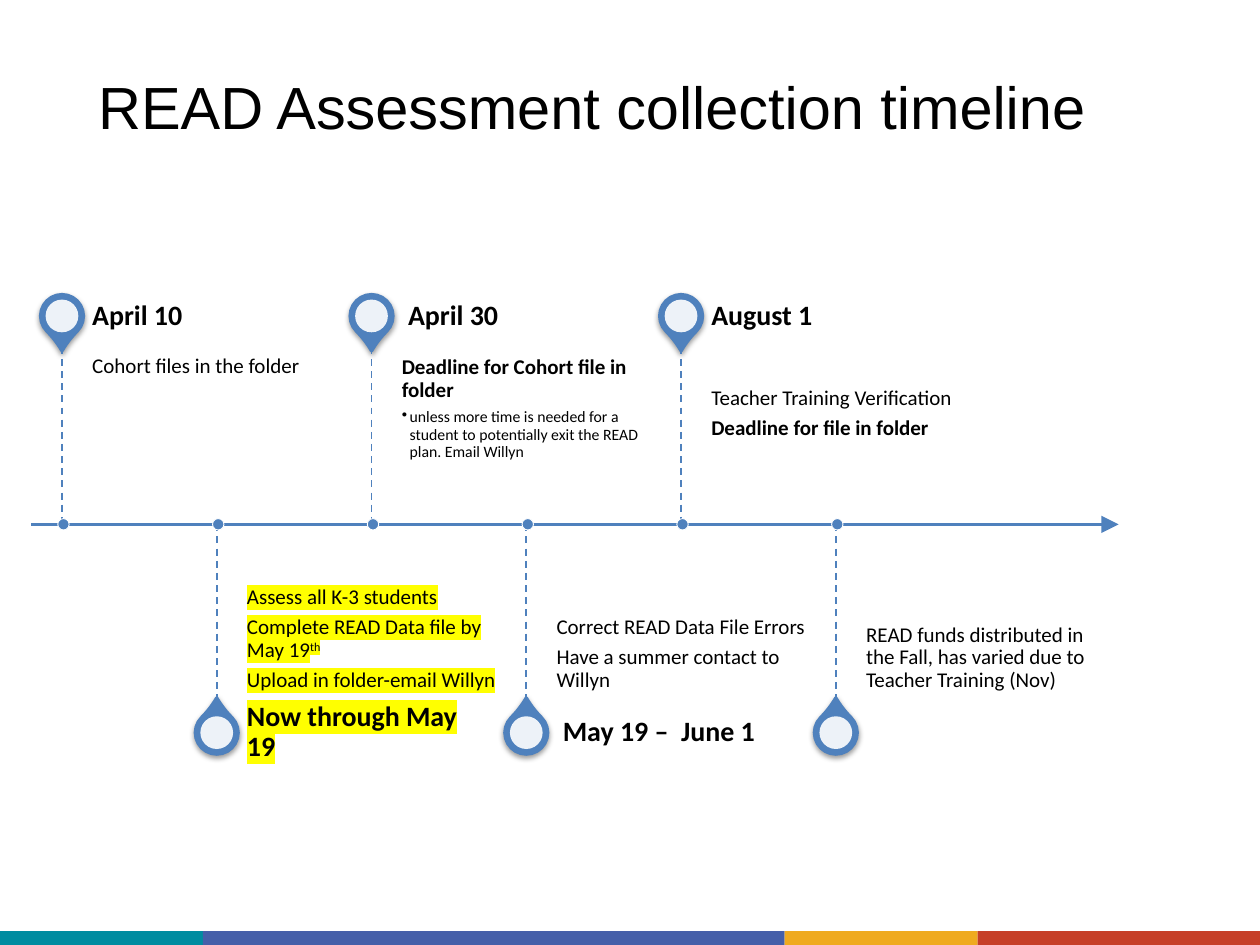
from lxml.etree import SubElement
from pptx import Presentation
from pptx.dml.color import RGBColor
from pptx.enum.dml import MSO_LINE
from pptx.enum.shapes import MSO_CONNECTOR, MSO_SHAPE
from pptx.enum.text import MSO_ANCHOR
from pptx.oxml import parse_xml
from pptx.oxml.ns import nsdecls, qn
from pptx.util import Cm, Pt

# Content: a run is (text, styles), a paragraph is a list of runs
TITLE = "READ Assessment collection timeline"
EVENTS = [
    {"heading": [[("April 10", "bold")]],
     "details": [[("Cohort files in the folder", "")]]},
    {"heading": [[("Now through May 19", "bold highlight")]],
     "details": [[("Assess all K-3 students", "highlight")],
                 [("Complete READ Data file by May 19", "highlight"),
                  ("th", "highlight superscript")],
                 [("Upload in folder-email Willyn", "highlight")]]},
    {"heading": [[(" April 30", "bold")]],
     "details": [[("Deadline for Cohort file in folder", "bold")],
                 [("unless more time is needed for a student to potentially "
                   "exit the READ plan. Email Willyn", "bullet")]]},
    {"heading": [[(" May 19 –  June 1", "bold")]],
     "details": [[("Correct READ Data File Errors", "")],
                 [("Have a summer contact to Willyn", "")]]},
    {"heading": [[("August 1", "bold")]], "top_inset": 0.87,
     "details": [[("Teacher Training Verification", "")],
                 [("Deadline for file in folder", "bold")]]},
    {"heading": [],
     "details": [[("READ funds distributed in the Fall, has varied due to "
                   "Teacher Training (Nov)", "")]]},
]
FOOTER = [("008CA0", 4.09), ("455FA9", 11.73), ("EFAA1F", 3.89), ("C63F28", 5.69)]

# Layout in centimetres
SLIDE_WIDTH, SLIDE_HEIGHT, FOOTER_HEIGHT = 25.4, 19.05, 0.28
AXIS_LEFT, AXIS_RIGHT, AXIS_Y = 0.63, 22.55, 10.57
FIRST_X, STEP = 1.25, 3.12
STEM, HEADING_HEIGHT, TEXT_WIDTH, TEXT_GAP = 3.58, 1.24, 5.05, 0.61
PIN, PIN_HOLE, DOT = 0.86, 0.66, 0.23
BLUE, BLACK, WHITE = "4F81BD", "000000", "FFFFFF"


def color(value):
    return RGBColor.from_string(value)


def add_shape(kind, left, top, width, height, fill, line=None, line_width=1):
    shape = slide.shapes.add_shape(kind, Cm(left), Cm(top), Cm(width), Cm(height))
    shape.shadow.inherit = False
    shape.fill.solid()
    shape.fill.fore_color.rgb = color(fill)
    if line:
        shape.line.color.rgb = color(line)
        shape.line.width = Pt(line_width)
    else:
        shape.line.fill.background()
    return shape


def add_round(kind, x, y, size, fill, line=None, line_width=1):
    return add_shape(kind, x - size / 2, y - size / 2, size, size,
                     fill, line, line_width)


def add_line(x1, y1, x2, y2, width):
    line = slide.shapes.add_connector(MSO_CONNECTOR.STRAIGHT,
                                      Cm(x1), Cm(y1), Cm(x2), Cm(y2))
    line.line.color.rgb = color(BLUE)
    line.line.width = Pt(width)
    SubElement(line._element.spPr, qn("a:effectLst"))
    return line


def add_run(paragraph, text, styles, size, font_name):
    run = paragraph.add_run()
    run.text = text
    run.font.size = Pt(size)
    run.font.bold = "bold" in styles
    run.font.color.rgb = color(BLACK)
    run.font.name = font_name
    properties = run.font._element
    if "highlight" in styles:
        properties.find(qn("a:solidFill")).addnext(parse_xml(
            f'<a:highlight {nsdecls("a")}><a:srgbClr val="FFFF00"/></a:highlight>'))
    if "superscript" in styles:
        properties.set("baseline", "30000")


def add_text(box, paragraphs, size, anchor, insets, font_name="Calibri", spacing=0.9):
    frame = slide.shapes.add_textbox(*(Cm(value) for value in box)).text_frame
    frame.word_wrap = True
    frame.vertical_anchor = anchor
    (frame.margin_left, frame.margin_top,
     frame.margin_right, frame.margin_bottom) = (Cm(value) for value in insets)
    for index, runs in enumerate(paragraphs):
        paragraph = frame.add_paragraph() if index else frame.paragraphs[0]
        paragraph.line_spacing = spacing
        if index < len(paragraphs) - 1:
            paragraph.space_after = Pt(0.35 * size)
        for text, styles in runs:
            bulleted = "bullet" in styles
            if bulleted:
                properties = paragraph._p.get_or_add_pPr()
                properties.set("marL", str(Cm(0.16)))
                properties.set("indent", str(Cm(-0.16)))
                SubElement(properties, qn("a:buChar"), char="•")
            add_run(paragraph, text, styles, 9 if bulleted else size, font_name)


def add_pin(x, y, rotation):
    pin = add_round(MSO_SHAPE.TEAR, x, y, PIN, BLUE, BLUE, 2)
    pin.adjustments[0] = 1.15
    pin.rotation = rotation
    effects = pin._element.spPr.find(qn("a:effectLst"))
    effects.append(parse_xml(
        f'<a:outerShdw {nsdecls("a")} blurRad="{Pt(3.1)}" dist="{Pt(1.6)}" '
        'dir="5400000" rotWithShape="0"><a:srgbClr val="000000">'
        '<a:alpha val="38000"/></a:srgbClr></a:outerShdw>'))
    hole = add_round(MSO_SHAPE.OVAL, x, y, PIN_HOLE, WHITE)
    fill = hole._element.spPr.find(qn("a:solidFill"))
    SubElement(fill[0], qn("a:alpha"), val="90000")


def add_event(index, event):
    x = FIRST_X + index * STEP
    text_left = x + TEXT_GAP
    above = index % 2 == 0
    if above:
        stem_end = AXIS_Y - STEM
        heading_top, details_top = stem_end - HEADING_HEIGHT, stem_end
        anchor, insets = MSO_ANCHOR.TOP, (0, event.get("top_inset", 0.2), 0.2, 0.3)
    else:
        stem_end = AXIS_Y + STEM
        heading_top, details_top = stem_end, AXIS_Y
        anchor, insets = MSO_ANCHOR.BOTTOM, (0, 0.3, 0, 0.2)
    add_pin(x, heading_top + HEADING_HEIGHT / 2, 135 if above else 315)
    add_text((text_left, details_top, TEXT_WIDTH, STEM),
             event["details"], 12, anchor, insets)
    if event["heading"]:
        add_text((text_left, heading_top, TEXT_WIDTH, HEADING_HEIGHT),
                 event["heading"], 16, MSO_ANCHOR.MIDDLE, (0, 0, 0.28, 0))
    stem = add_line(x, min(AXIS_Y, stem_end), x, max(AXIS_Y, stem_end), 1)
    stem.line.dash_style = MSO_LINE.DASH
    add_round(MSO_SHAPE.OVAL, x + 0.03, AXIS_Y, DOT, BLUE, WHITE, 0.5)


presentation = Presentation()
presentation.slide_width = Cm(SLIDE_WIDTH)
presentation.slide_height = Cm(SLIDE_HEIGHT)
slide = presentation.slides.add_slide(presentation.slide_layouts[6])

# Footer stripe
left = 0
for fill, width in FOOTER:
    add_shape(MSO_SHAPE.RECTANGLE, left, SLIDE_HEIGHT - FOOTER_HEIGHT,
              width, FOOTER_HEIGHT, fill)
    left += width

# Title
add_text((1.98, 0, 21.23, 4.55), [[(TITLE, "")]], 34, MSO_ANCHOR.TOP,
         (0, 1.42, 0, 0), "Arial", 1)

# Timeline axis and events
axis = add_line(AXIS_LEFT, AXIS_Y, AXIS_RIGHT, AXIS_Y, 1.5)
SubElement(axis.line._get_or_add_ln(), qn("a:tailEnd"),
           type="triangle", w="lg", len="lg")
for index, event in enumerate(EVENTS):
    add_event(index, event)

presentation.save("out.pptx")
